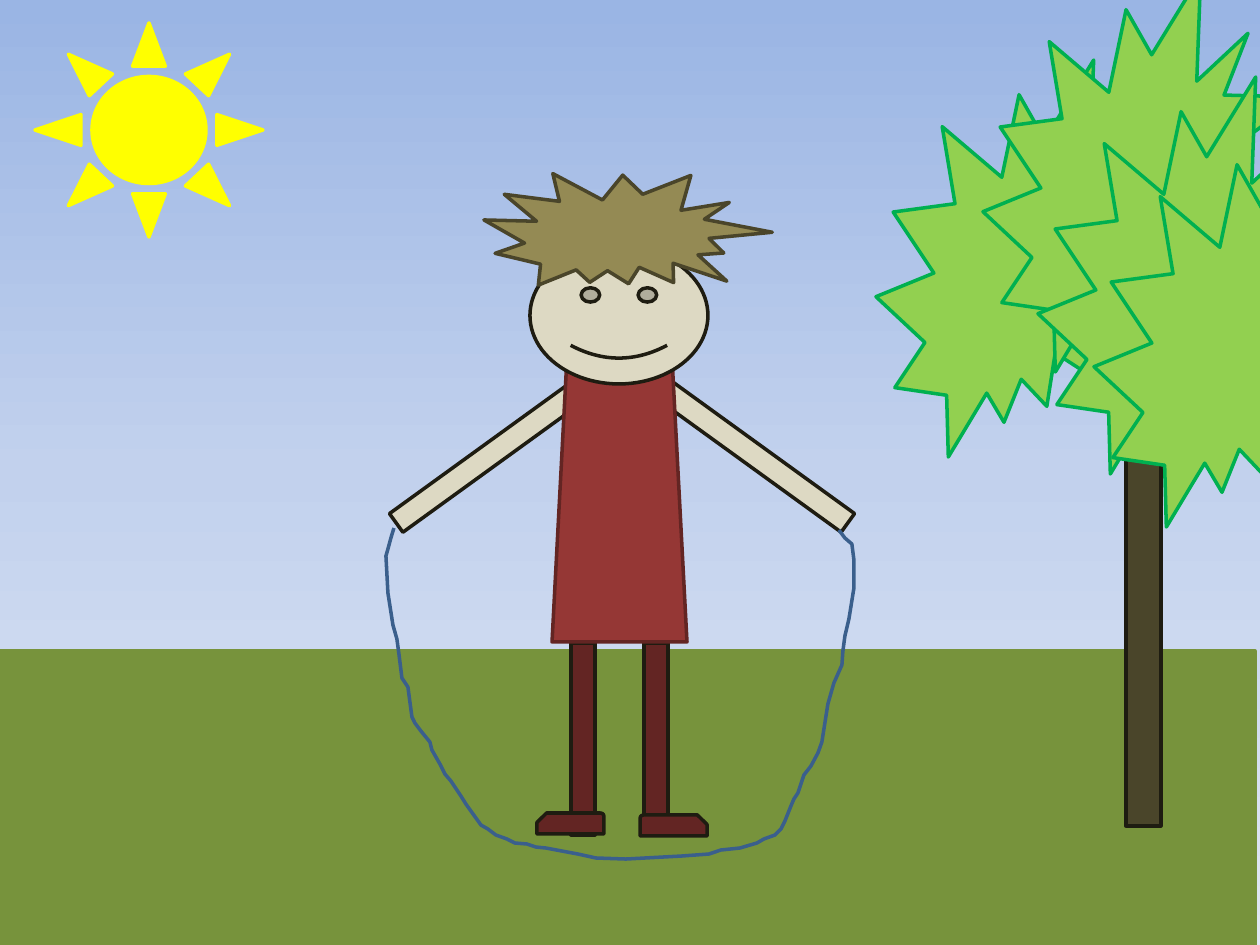
from copy import deepcopy
from dataclasses import dataclass

from pptx import Presentation
from pptx.dml.color import RGBColor
from pptx.enum.shapes import MSO_SHAPE
from pptx.oxml.ns import qn
from pptx.util import Inches, Pt

PX = Inches(1) / 126


@dataclass(frozen=True)
class Theme:
    sky: tuple = ((0, "9AB5E4"), (0.5, "C2D1ED"), (1, "E1E8F5"))
    grass: str = "77933C"
    sun: str = "FFFF00"
    outline: str = "1E1C11"
    skin: str = "DDD9C3"
    dress: str = "953735"
    legs: str = "632523"
    hair: str = "948A54"
    bark: str = "4A452A"
    leaf: str = "92D050"
    leaf_edge: str = "00B050"
    rope: str = "3A5F8C"
    line_width: int = 2


THEME = Theme()

ROPE_POINTS = [
    (8, 0), (5, 10), (2, 21), (0, 28), (2, 65), (7, 97), (11, 111), (13, 126),
    (16, 150), (22, 159), (26, 189), (29, 195), (35, 203), (44, 214), (46, 222),
    (54, 236), (59, 246), (65, 253), (75, 268), (80, 276), (90, 290), (95, 297),
    (102, 301), (110, 307), (121, 311), (129, 315), (141, 316), (150, 319),
    (160, 320), (192, 326), (210, 330), (240, 331), (296, 328), (323, 326),
    (335, 322), (354, 320), (371, 315), (378, 311), (389, 307), (395, 301),
    (399, 293), (405, 278), (408, 271), (412, 265), (418, 247), (425, 238),
    (432, 225), (436, 214), (442, 176), (448, 155), (456, 137), (457, 123),
    (459, 108), (463, 91), (468, 60), (468, 32), (466, 16), (459, 10), (453, 2),
]


def emu(pixels):
    return round(pixels * PX)


def set_outline(shape, color):
    shape.shadow.inherit = False
    shape.line.color.rgb = RGBColor.from_string(color)
    shape.line.width = Pt(THEME.line_width)


def add_part(shapes, kind, origin, box, fill, line, rotation=0,
             adjustments=(), mirrored=False):
    """Add a preset shape; box is left, top, width, height from origin."""
    left, top, width, height = box
    shape = shapes.add_shape(kind, emu(origin[0] + left), emu(origin[1] + top),
                             emu(width), emu(height))
    shape.fill.solid()
    shape.fill.fore_color.rgb = RGBColor.from_string(fill)
    set_outline(shape, line)
    shape.rotation = rotation
    for index, value in enumerate(adjustments):
        shape.adjustments[index] = value
    if mirrored:
        shape.element.spPr.find(qn("a:xfrm")).set("flipH", "1")
    return shape


def paint_sky(slide):
    fill = slide.background.fill
    fill.gradient()
    fill.gradient_angle = 270
    last_stop = list(slide.element.iter(qn("a:gs")))[-1]
    last_stop.addnext(deepcopy(last_stop))
    for stop, (position, color) in zip(fill.gradient_stops, THEME.sky):
        stop.position = position
        stop.color.rgb = RGBColor.from_string(color)


def add_arm(shapes, origin, left, rotation):
    add_part(shapes, MSO_SHAPE.RECTANGLE, origin, (left, 181, 23, 223),
             THEME.skin, THEME.outline, rotation)


def add_rope(shapes, origin):
    builder = shapes.build_freeform(*ROPE_POINTS[0], scale=PX)
    builder.add_line_segments(ROPE_POINTS[1:], close=False)
    rope = builder.convert_to_shape(emu(origin[0]), emu(origin[1]))
    rope.fill.background()
    set_outline(rope, THEME.rope)


def add_child(shapes, origin):
    """Draw the child; one arm and the rope lie behind the grouped body."""
    add_arm(shapes, origin, 362, 125.9)
    add_rope(shapes, (origin[0] + 2, origin[1] + 363))
    body = shapes.add_group_shape().shapes
    for left in (187, 260):
        add_part(body, MSO_SHAPE.RECTANGLE, origin, (left, 478, 24, 192),
                 THEME.legs, THEME.outline)
    add_arm(body, origin, 91, 234.1)
    add_part(body, MSO_SHAPE.TRAPEZOID, origin, (168, 190, 135, 287),
             THEME.dress, THEME.legs, adjustments=(0.112,))
    add_part(body, MSO_SHAPE.SMILEY_FACE, origin, (146, 82, 178, 137),
             THEME.skin, THEME.outline)
    for left, top, mirrored in ((256, 650, False), (153, 648, True)):
        add_part(body, MSO_SHAPE.SNIP_ROUND_RECTANGLE, origin,
                 (left, top, 67, 21), THEME.legs, THEME.outline,
                 adjustments=(0.167, 0.456), mirrored=mirrored)
    add_part(body, MSO_SHAPE.EXPLOSION2, origin, (100, 0, 286, 135),
             THEME.hair, THEME.bark, rotation=10.2)


def add_tree(shapes, origin):
    tree = shapes.add_group_shape().shapes
    add_part(tree, MSO_SHAPE.RECTANGLE, origin, (250, 232, 35, 619),
             THEME.bark, THEME.outline)
    for left, top in ((0, 85), (107, 0), (162, 102), (218, 155)):
        add_part(tree, MSO_SHAPE.EXPLOSION2, origin, (left, top, 318, 397),
                 THEME.leaf, THEME.leaf_edge)


def main():
    presentation = Presentation()
    presentation.slide_width = emu(1260)
    presentation.slide_height = emu(945)
    slide = presentation.slides.add_slide(presentation.slide_layouts[6])
    shapes = slide.shapes
    paint_sky(slide)
    add_part(shapes, MSO_SHAPE.RECTANGLE, (-5, 651), (0, 0, 1260, 294),
             THEME.grass, THEME.grass)
    add_child(shapes, (384, 165))
    add_part(shapes, MSO_SHAPE.SUN, (35, 23), (0, 0, 228, 214),
             THEME.sun, THEME.sun)
    add_tree(shapes, (876, -25))
    presentation.save("out.pptx")


if __name__ == "__main__":
    main()
